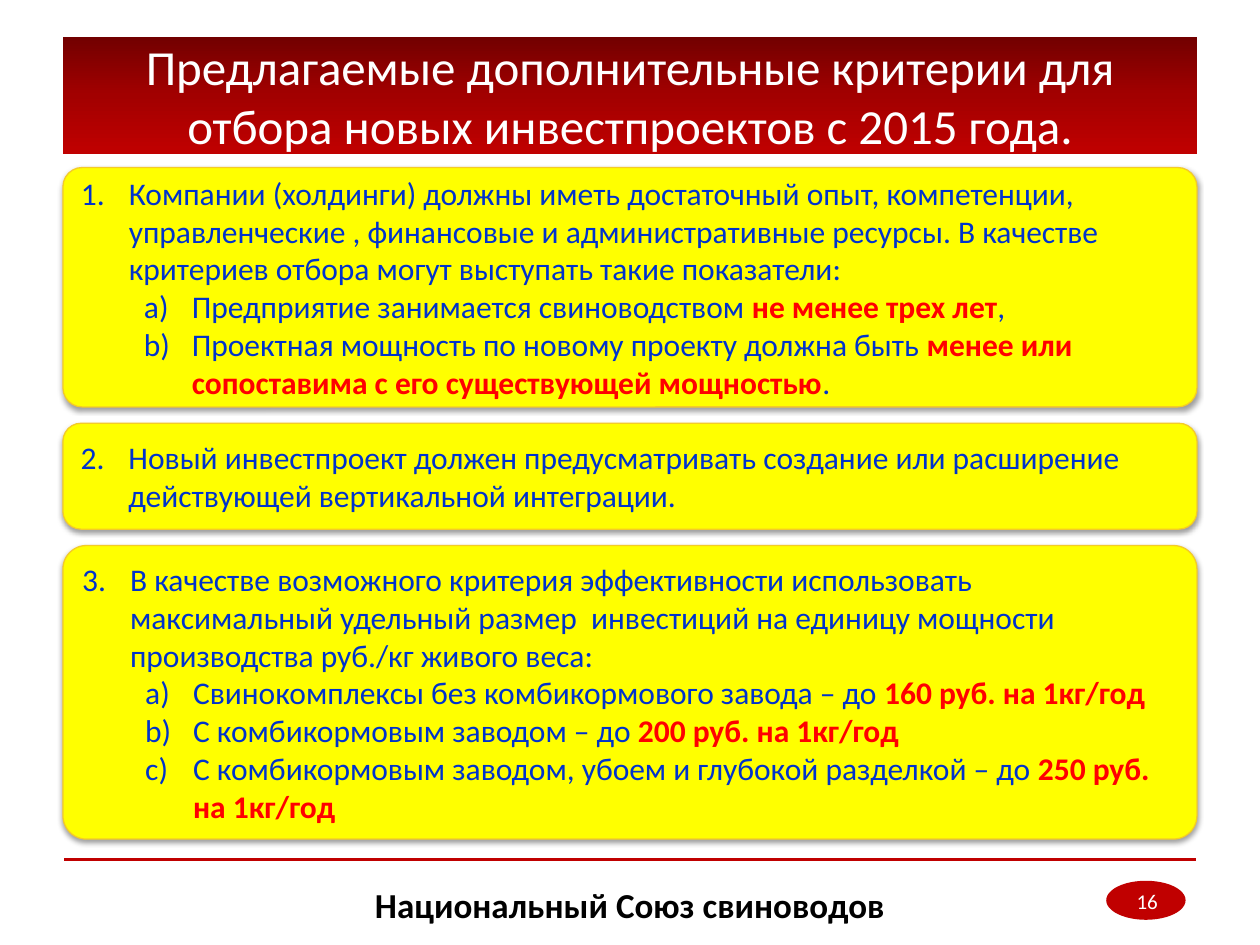
"""Build a slide with criteria for selecting new investment projects."""
from dataclasses import dataclass

import lxml.etree
import pptx
import pptx.dml.color
import pptx.enum.dml
import pptx.enum.shapes
import pptx.enum.text
import pptx.oxml.ns
import pptx.util
from pptx.util import Inches

FONT = "Calibri"
RED = "C00000"
BLUE = "0033CC"
WHITE = "FFFFFF"
LEFT, WIDTH = 0.5, 9
ALIGN = pptx.enum.text.PP_ALIGN
MIDDLE = pptx.enum.text.MSO_ANCHOR.MIDDLE
SHAPE = pptx.enum.shapes.MSO_SHAPE


@dataclass
class Condition:
    text: str
    emphasis: str
    ending: str = ""


@dataclass
class Criterion:
    top: float
    height: float
    corner: float
    text: str
    conditions: tuple[Condition, ...] = ()


CRITERIA = (
    Criterion(
        1.33, 1.9, 0.08,
        "Компании (холдинги) должны иметь достаточный опыт, компетенции, "
        "управленческие , финансовые и административные ресурсы. "
        "В качестве критериев отбора могут выступать такие показатели:",
        (
            Condition("Предприятие занимается свиноводством ", "не менее трех лет", ","),
            Condition("Проектная мощность по новому проекту должна быть ",
                      "менее или сопоставима с его существующей мощностью", "."),
        ),
    ),
    Criterion(
        3.36, 0.84, 0.17,
        "Новый инвестпроект должен предусматривать создание или расширение "
        "действующей вертикальной интеграции.",
    ),
    Criterion(
        4.33, 2.33, 0.08,
        "В качестве возможного критерия эффективности использовать максимальный "
        "удельный размер  инвестиций на единицу мощности производства "
        "руб./кг живого веса:",
        (
            Condition("Свинокомплексы без комбикормового завода – до ", "160 руб. на 1кг/год"),
            Condition("С комбикормовым заводом – до ", "200 руб. на 1кг/год"),
            Condition("С комбикормовым заводом, убоем и глубокой разделкой – до ",
                      "250 руб. на 1кг/год"),
        ),
    ),
)


def color(value: str) -> pptx.dml.color.RGBColor:
    return pptx.dml.color.RGBColor.from_string(value)


def add_element(parent, tag: str, **attributes: str):
    return lxml.etree.SubElement(parent, pptx.oxml.ns.qn(tag), attributes)


def format_run(run, size: float, value: str, bold: bool = False) -> None:
    run.font.name = FONT
    run.font.size = pptx.util.Pt(size)
    run.font.bold = bold
    run.font.color.rgb = color(value)


def add_run(paragraph, text: str, value: str, bold: bool = False) -> None:
    run = paragraph.add_run()
    run.text = text
    format_run(run, 18, value, bold)


def set_numbering(paragraph, level: int, scheme: str, start: int = 1) -> None:
    paragraph.level = level
    paragraph.alignment = ALIGN.LEFT
    properties = paragraph._p.get_or_add_pPr()
    properties.set("marL", str(Inches(0.38 + 0.5 * level)))
    properties.set("indent", str(Inches(-0.38)))
    add_element(properties, "a:buFont", typeface="+mj-lt")
    add_element(properties, "a:buAutoNum", type=scheme, startAt=str(start))


def add_shadow(shape) -> None:
    shape.shadow.inherit = False
    effects = shape._element.spPr.find(pptx.oxml.ns.qn("a:effectLst"))
    shadow = add_element(
        effects, "a:outerShdw", blurRad=str(pptx.util.Pt(3.1)),
        dist=str(pptx.util.Pt(1.6)), dir="5400000", rotWithShape="0")
    add_element(add_element(shadow, "a:srgbClr", val="000000"), "a:alpha", val="38000")


def add_criterion(slide, number: int, criterion: Criterion) -> None:
    shape = slide.shapes.add_shape(
        SHAPE.ROUNDED_RECTANGLE, Inches(LEFT), Inches(criterion.top),
        Inches(WIDTH), Inches(criterion.height))
    shape.adjustments[0] = criterion.corner
    shape.fill.solid()
    shape.fill.fore_color.rgb = color("FFFF00")
    shape.line.color.rgb = color("F4CB27")
    shape.line.width = pptx.util.Pt(0.75)
    add_shadow(shape)
    frame = shape.text_frame
    frame.word_wrap = True
    frame.vertical_anchor = MIDDLE
    set_numbering(frame.paragraphs[0], 0, "arabicPeriod", number)
    add_run(frame.paragraphs[0], criterion.text, BLUE)
    for condition in criterion.conditions:
        paragraph = frame.add_paragraph()
        set_numbering(paragraph, 1, "alphaLcParenR")
        add_run(paragraph, condition.text, BLUE)
        add_run(paragraph, condition.emphasis, "FF0000", True)
        if condition.ending:
            add_run(paragraph, condition.ending, BLUE)


def format_title(title) -> None:
    title.left, title.top = Inches(LEFT), Inches(0.29)
    title.width, title.height = Inches(WIDTH), Inches(0.93)
    title.fill.gradient()
    title.fill.gradient_angle = 270
    stops = title._element.spPr.find(".//" + pptx.oxml.ns.qn("a:gsLst"))
    stops.clear()
    for position, value in ((0, "720000"), (50, "A20000"), (100, RED)):
        stop = add_element(stops, "a:gs", pos=str(position * 1000))
        add_element(stop, "a:srgbClr", val=value)
    frame = title.text_frame
    frame.text = ("Предлагаемые дополнительные критерии для отбора "
                  "новых инвестпроектов с 2015 года.")
    frame.word_wrap = True
    frame.auto_size = pptx.enum.text.MSO_AUTO_SIZE.NONE
    frame.vertical_anchor = MIDDLE
    frame.paragraphs[0].alignment = ALIGN.CENTER
    format_run(frame.paragraphs[0].runs[0], 28, WHITE)


def add_label(slide, text: str, left: float, top: float, width: float,
              alignment, size: float, value: str, bold: bool = False):
    box = slide.shapes.add_textbox(Inches(left), Inches(top), Inches(width), Inches(0.4))
    frame = box.text_frame
    frame.text = text
    frame.word_wrap = True
    frame.vertical_anchor = MIDDLE
    frame.paragraphs[0].alignment = alignment
    format_run(frame.paragraphs[0].runs[0], size, value, bold)
    return box


def add_footer(slide) -> None:
    badge = slide.shapes.add_shape(
        SHAPE.OVAL, Inches(8.78), Inches(6.99), Inches(0.63), Inches(0.31))
    badge.shadow.inherit = False
    badge.fill.solid()
    badge.fill.fore_color.rgb = color(RED)
    badge.line.fill.background()
    rule = slide.shapes.add_connector(
        pptx.enum.shapes.MSO_CONNECTOR.STRAIGHT,
        Inches(9.49), Inches(6.82), Inches(0.51), Inches(6.82))
    rule.line.color.rgb = color(RED)
    rule.line.width = pptx.util.Pt(1.5)
    add_element(rule._element.spPr, "a:effectLst")
    add_label(slide, "Национальный Союз свиноводов", 2.01, 6.98, 5.98,
              ALIGN.CENTER, 20, "000000", True)
    number = add_label(slide, "16", 7.36, 6.95, 2.33, ALIGN.RIGHT, 12, WHITE)
    number.text_frame.margin_right = Inches(0.5)


def main() -> None:
    presentation = pptx.Presentation()
    presentation.slide_width, presentation.slide_height = Inches(10), Inches(7.5)
    slide = presentation.slides.add_slide(presentation.slide_layouts[5])
    format_title(slide.shapes.title)
    for number, criterion in enumerate(CRITERIA, 1):
        add_criterion(slide, number, criterion)
    add_footer(slide)
    presentation.save("out.pptx")


if __name__ == "__main__":
    main()
